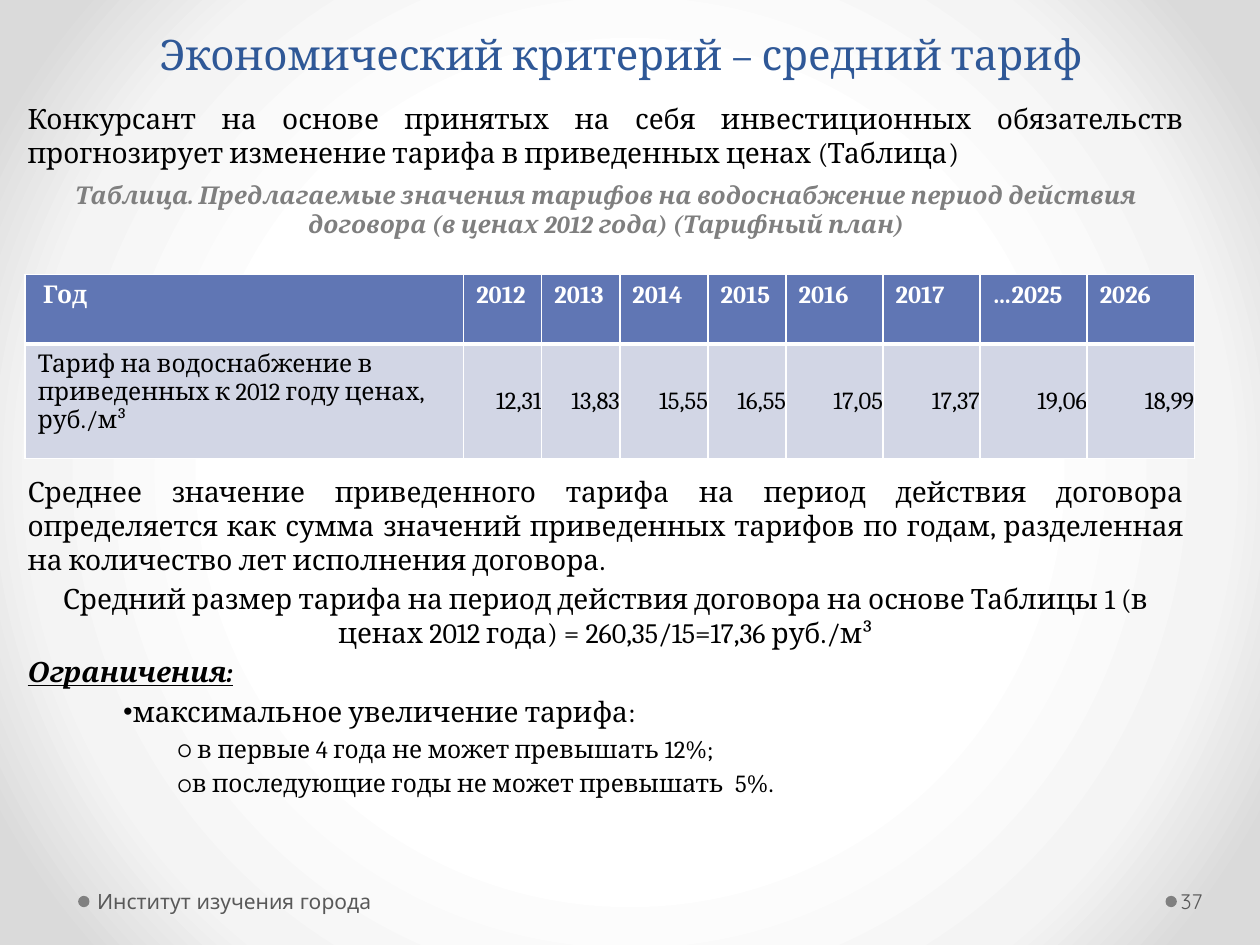
from dataclasses import dataclass

import pptx
import pptx.dml.color
import pptx.enum.shapes
import pptx.enum.text
import pptx.oxml
import pptx.oxml.ns
import pptx.util
from pptx.util import Inches

Pt = pptx.util.Pt
ALIGN = pptx.enum.text.PP_ALIGN
ANCHOR = pptx.enum.text.MSO_ANCHOR
NS = pptx.oxml.ns.nsdecls("a")


@dataclass(frozen=True)
class Theme:
    serif: str = "Cambria"
    sans: str = "Quicksand"
    title: str = "2F5897"
    text: str = "000000"
    caption: str = "7F7F7F"
    footer: str = "595959"
    dot: str = "808080"
    header: str = "6076B4"
    row: str = "D2D6E5"
    white: str = "FFFFFF"
    title_size: int = 24
    body_size: int = 16
    small_size: int = 14
    footer_size: int = 12


THEME = Theme()


@dataclass(frozen=True)
class Para:
    text: str
    size: int = THEME.body_size
    color: str = THEME.text
    font: str = THEME.serif
    align: ALIGN = ALIGN.JUSTIFY
    bold: bool = False
    italic: bool = False
    underline: bool = False
    before: float = 0
    after: float = 0
    bullet: str = ""
    indent: float = 0
    level: int = 0


@dataclass(frozen=True)
class Tariff:
    year: str
    price: str
    width: float


TARIFFS = [
    Tariff("2012", "12,31", 0.62), Tariff("2013", "13,83", 0.62),
    Tariff("2014", "15,55", 0.7), Tariff("2015", "16,55", 0.62),
    Tariff("2016", "17,05", 0.77), Tariff("2017", "17,37", 0.77),
    Tariff("…2025", "19,06", 0.85), Tariff("2026", "18,99", 0.85),
]
INTRO = [
    Para("Конкурсант на основе принятых на себя инвестиционных обязательств "
         "прогнозирует изменение тарифа в приведенных ценах (Таблица)"),
    Para("Таблица. Предлагаемые значения тарифов на водоснабжение период действия "
         "договора (в ценах 2012 года) (Тарифный план)", THEME.small_size,
         THEME.caption, align=ALIGN.CENTER, bold=True, italic=True, before=6, after=6),
]
CONCLUSIONS = [
    Para("Среднее значение приведенного тарифа на период действия договора "
         "определяется как сумма значений приведенных тарифов по годам, разделенная "
         "на количество лет исполнения договора."),
    Para("Средний размер тарифа на период действия договора на основе Таблицы 1 "
         "(в ценах 2012 года) = 260,35/15=17,36 руб./м³", align=ALIGN.CENTER, before=3.5),
    Para("Ограничения:", bold=True, italic=True, underline=True, before=3.5),
    Para("максимальное увеличение тарифа:", before=3.5, bullet="•", indent=0.38),
    Para(" в первые 4 года не может превышать 12%;", THEME.small_size,
         before=3, bullet="o", indent=0.81, level=1),
    Para("в последующие годы не может превышать  5%.", THEME.small_size,
         before=3, bullet="o", indent=0.81, level=1),
]


def rgb(color: str) -> pptx.dml.color.RGBColor:
    return pptx.dml.color.RGBColor.from_string(color)


def fill_frame(frame, paras: list[Para], anchor=ANCHOR.TOP,
               insets=(0.1, 0.05, 0.1, 0.05)) -> None:
    """Write paragraphs; insets are left, top, right and bottom in inches."""
    frame.word_wrap = True
    frame.auto_size = pptx.enum.text.MSO_AUTO_SIZE.NONE
    frame.vertical_anchor = anchor
    (frame.margin_left, frame.margin_top,
     frame.margin_right, frame.margin_bottom) = map(Inches, insets)
    for index, para in enumerate(paras):
        write_para(frame.add_paragraph() if index else frame.paragraphs[0], para)


def write_para(paragraph, para: Para) -> None:
    paragraph.text = para.text
    paragraph.alignment = para.align
    paragraph.level = para.level
    paragraph.space_before = Pt(para.before)
    paragraph.space_after = Pt(para.after)
    if para.bullet:
        properties = paragraph._p.get_or_add_pPr()
        properties.set("marL", str(Inches(para.indent)))
        properties.set("indent", str(Inches(0.38)))
        for tag in (f'<a:buFont {NS} typeface="{THEME.sans}"/>',
                    f'<a:buChar {NS} char="{para.bullet}"/>'):
            properties.append(pptx.oxml.parse_xml(tag))
    font = paragraph.font
    font.name, font.size = para.font, Pt(para.size)
    font.bold, font.italic, font.underline = para.bold, para.italic, para.underline
    font.color.rgb = rgb(para.color)


def add_text(slide, left: float, top: float, width: float, height: float,
             paras: list[Para], **layout) -> None:
    box = slide.shapes.add_textbox(*map(Inches, (left, top, width, height)))
    fill_frame(box.text_frame, paras, **layout)


def set_background(slide) -> None:
    """Radial gradient, white in the middle and grey at the edges."""
    slide.background.fill.solid()
    properties = slide.background._cSld.bg.bgPr
    stops = "".join(
        f'<a:gs pos="{pos}000"><a:srgbClr val="{color}"/></a:gs>'
        for pos, color in ((50, "FFFFFF"), (76, "F4F4F4"), (92, "DADADA")))
    gradient = pptx.oxml.parse_xml(
        f'<a:gradFill {NS} rotWithShape="1"><a:gsLst>{stops}</a:gsLst><a:path path="circle">'
        '<a:fillToRect l="50000" t="50000" r="50000" b="50000"/></a:path></a:gradFill>')
    properties.replace(properties[0], gradient)


def add_dot(slide, left: float) -> None:
    dot = slide.shapes.add_shape(pptx.enum.shapes.MSO_SHAPE.OVAL, Inches(left),
                                 Inches(7.11), Inches(0.09), Inches(0.09))
    dot.shadow.inherit = False
    dot.fill.solid()
    dot.fill.fore_color.rgb = rgb(THEME.dot)
    dot.line.fill.background()


def style_cell(cell, fill: str, bottom_width: float) -> None:
    properties = cell._tc.get_or_add_tcPr()
    for side in "LRTB":
        width = Pt(bottom_width if side == "B" else 1)
        properties.append(pptx.oxml.parse_xml(
            f'<a:ln{side} {NS} w="{width}"><a:solidFill>'
            f'<a:srgbClr val="{THEME.white}"/></a:solidFill></a:ln{side}>'))
    cell.fill.solid()
    cell.fill.fore_color.rgb = rgb(fill)


def add_tariff_table(slide) -> None:
    widths = [3.48] + [tariff.width for tariff in TARIFFS]
    table = slide.shapes.add_table(2, len(widths), Inches(0.2), Inches(2.18),
                                   Inches(sum(widths)), Inches(1.46)).table
    table.horz_banding = False
    for row, height in zip(table.rows, (0.55, 0.91)):
        row.height = Inches(height)
    years = [" Год"] + [tariff.year for tariff in TARIFFS]
    prices = ["Тариф на водоснабжение в приведенных к 2012 году ценах, руб./м³"]
    prices += [tariff.price for tariff in TARIFFS]
    for column, (width, year, price) in enumerate(zip(widths, years, prices)):
        table.columns[column].width = Inches(width)
        header, value = table.cell(0, column), table.cell(1, column)
        style_cell(header, THEME.header, 3)
        style_cell(value, THEME.row, 1)
        write_para(header.text_frame.paragraphs[0],
                   Para(year, THEME.small_size, THEME.white, align=ALIGN.LEFT, bold=True))
        write_para(value.text_frame.paragraphs[0],
                   Para(price, THEME.small_size, align=ALIGN.RIGHT if column else ALIGN.LEFT))
        if column:
            value.vertical_anchor = ANCHOR.MIDDLE
            value.margin_left = value.margin_right = 0
            value.margin_top = value.margin_bottom = 0


def add_footer(slide, left: float, width: float, text: str, insets) -> None:
    add_text(slide, left, 6.95, width, 0.4,
             [Para(text, THEME.footer_size, THEME.footer, THEME.sans, ALIGN.LEFT)],
             anchor=ANCHOR.MIDDLE, insets=insets)


def main() -> None:
    deck = pptx.Presentation()
    deck.slide_width, deck.slide_height = Inches(10), Inches(7.5)
    slide = deck.slides.add_slide(deck.slide_layouts[5])
    set_background(slide)
    for left in (9.25, 0.62):
        add_dot(slide, left)
    title = slide.shapes.title
    title.left, title.top, title.width, title.height = map(Inches, (0.43, 0.13, 9, 0.55))
    fill_frame(title.text_frame, [Para("Экономический критерий – средний тариф",
               THEME.title_size, THEME.title, align=ALIGN.CENTER)], ANCHOR.BOTTOM)
    add_text(slide, 0.12, 0.76, 9.38, 1.3, INTRO)
    add_tariff_table(slide)
    add_text(slide, 0.12, 3.72, 9.38, 3.2, CONCLUSIONS)
    add_footer(slide, 9.34, 0.61, "37", (0.03, 0.05, 0.05, 0.05))
    add_footer(slide, 0.72, 3.11, "Институт изучения города", (0.05, 0.05, 0.1, 0.05))
    deck.save("out.pptx")


if __name__ == "__main__":
    main()
